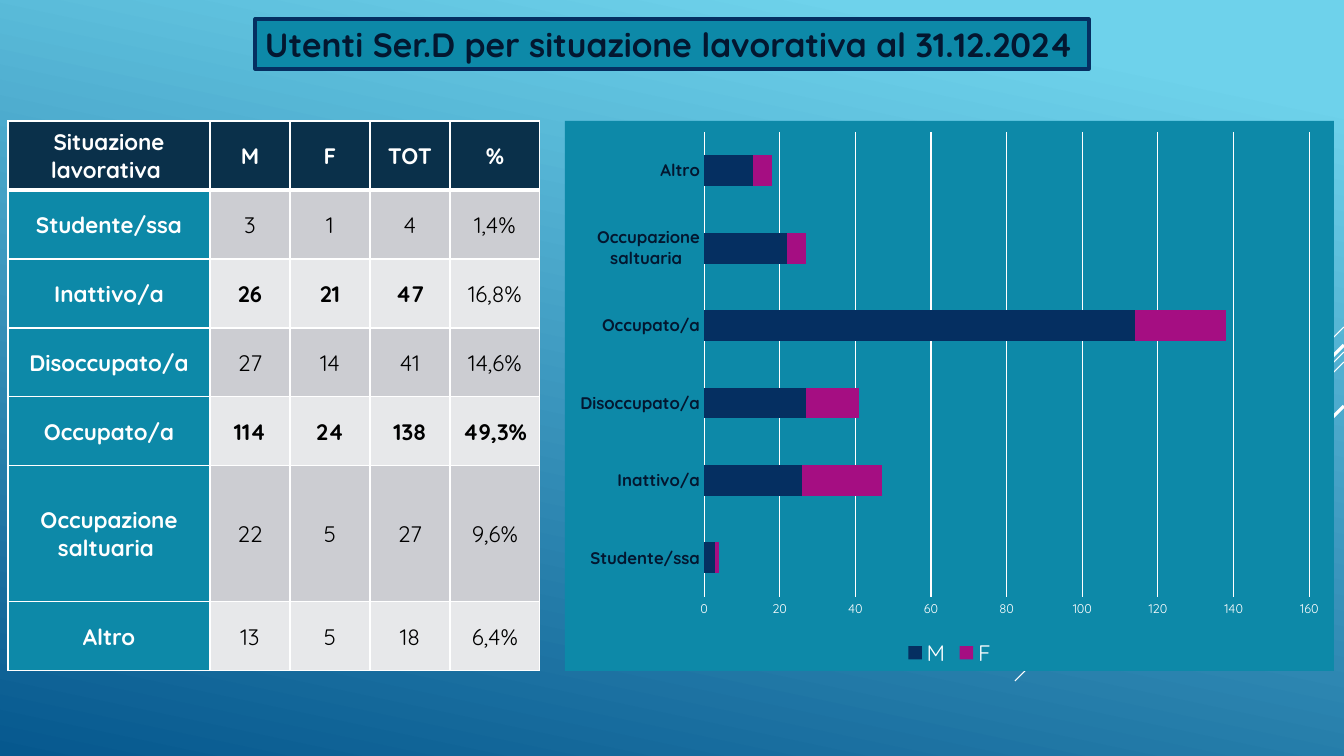
from dataclasses import dataclass

from lxml.etree import SubElement
from pptx import Presentation
from pptx.chart.data import CategoryChartData
from pptx.dml.color import RGBColor
from pptx.enum.chart import XL_CHART_TYPE, XL_LEGEND_POSITION, XL_TICK_MARK
from pptx.enum.shapes import MSO_CONNECTOR, MSO_SHAPE
from pptx.enum.text import MSO_ANCHOR, PP_ALIGN
from pptx.oxml import parse_xml
from pptx.oxml.ns import nsdecls, qn
from pptx.util import Pt

SLIDE_W, SLIDE_H = 1344, 756
SCALE = 12192000 / SLIDE_W


@dataclass(frozen=True)
class Theme:
    font: str = "Quicksand"
    sky: str = "6ED2EB"
    deep: str = "06588E"
    teal: str = "0D89A8"
    navy: str = "052F61"
    magenta: str = "A50E82"
    header: str = "0A304A"
    ink: str = "031730"
    white: str = "FFFFFF"
    black: str = "000000"
    bands: tuple = ("CCCDD2", "E7E8EA")
    title_size: int = 24
    body_size: int = 16
    category_size: int = 12
    chart_size: int = 10
    scale_size: int = 9


THEME = Theme()

HEADINGS = ["Situazione lavorativa ", "M", "F", "TOT", "%"]
SITUATIONS = [
    ("Studente/ssa", 3, 1, 4, "1,4%"),
    ("Inattivo/a", 26, 21, 47, "16,8%"),
    ("Disoccupato/a", 27, 14, 41, "14,6%"),
    ("Occupato/a", 114, 24, 138, "49,3%"),
    ("Occupazione saltuaria ", 22, 5, 27, "9,6%"),
    ("Altro", 13, 5, 18, "6,4%"),
]
# Last bold column in each emphasised row
BOLD_UNTIL = {"Inattivo/a": 3, "Occupato/a": 4}


def px(length):
    return round(length * SCALE)


def rgb(value):
    return RGBColor.from_string(value)


def style_font(font, size, color, bold=False):
    formats = {"name": THEME.font, "size": Pt(size), "bold": bold}
    for attribute, value in formats.items():
        setattr(font, attribute, value)
    font.color.rgb = rgb(color)


def style_line(line, color, width):
    line.color.rgb = rgb(color)
    line.width = Pt(width)


def add_background(slide):
    fill = slide.background.fill
    fill.gradient()
    fill.gradient_angle = 258
    for stop, (color, position) in zip(fill.gradient_stops, [(THEME.sky, 0.1), (THEME.deep, 1)]):
        stop.color.rgb = rgb(color)
        stop.position = position


def add_diagonals(slide, right):
    # Every ray leaves the right edge and falls at 45 degrees: top, run, width
    for top, run, width in [(327, 101, 0.75), (352, 329, 0.75), (362, 209, 0.75),
                            (345, 193, 2.25), (406, 140, 2.25)]:
        ray = slide.shapes.add_connector(
            MSO_CONNECTOR.STRAIGHT, px(right), px(top), px(right - run), px(top + run))
        style_line(ray.line, THEME.white, width)
        SubElement(ray._element.spPr, qn("a:effectLst"))


def add_title(slide, box):
    banner = slide.shapes.add_shape(MSO_SHAPE.RECTANGLE, *map(px, box))
    banner.shadow.inherit = False
    banner.fill.solid()
    banner.fill.fore_color.rgb = rgb(THEME.teal)
    style_line(banner.line, THEME.navy, 2.25)
    banner.text_frame.word_wrap = False
    heading = banner.text_frame.paragraphs[0]
    heading.alignment = PP_ALIGN.LEFT
    run = heading.add_run()
    run.text = "Utenti Ser.D per situazione lavorativa al 31.12.2024"
    style_font(run.font, THEME.title_size, THEME.ink, True)


def add_borders(cell, top, bottom):
    properties = cell._tc.get_or_add_tcPr()
    for side, width in {"L": 1, "R": 1, "T": top, "B": bottom}.items():
        border = SubElement(properties, qn(f"a:ln{side}"), w=str(Pt(width)))
        fill = SubElement(border, qn("a:solidFill"))
        SubElement(fill, qn("a:srgbClr"), val=THEME.white)


def fill_cell(cell, content, fill, color, bold):
    cell.fill.solid()
    cell.fill.fore_color.rgb = rgb(fill)
    formats = {"vertical_anchor": MSO_ANCHOR.MIDDLE, "margin_left": px(1),
               "margin_right": px(1), "margin_top": px(1), "margin_bottom": 0}
    for attribute, value in formats.items():
        setattr(cell, attribute, value)
    paragraph = cell.text_frame.paragraphs[0]
    paragraph.alignment = PP_ALIGN.CENTER
    run = paragraph.add_run()
    run.text = str(content)
    style_font(run.font, THEME.body_size, color, bold)


def add_situation_table(slide, box):
    rows = [HEADINGS, *SITUATIONS]
    table = slide.shapes.add_table(len(rows), len(HEADINGS), *map(px, box)).table
    for column, width in zip(table.columns, [202, 80, 80, 80, 90]):
        column.width = px(width)
    for row, height in zip(table.rows, [69, 69, 69, 69, 69, 136, 69]):
        row.height = px(height)
    for r, values in enumerate(rows):
        for c, content in enumerate(values):
            cell = table.cell(r, c)
            add_borders(cell, 3 if r == 1 else 1, 3 if r == 0 else 1)
            if r == 0:
                fill_cell(cell, content, THEME.header, THEME.white, True)
            elif c == 0:
                fill_cell(cell, content, THEME.teal, THEME.white, True)
            else:
                bold = c <= BOLD_UNTIL.get(values[0], 0)
                fill_cell(cell, content, THEME.bands[(r - 1) % 2], THEME.black, bold)


def add_situation_chart(slide, box):
    data = CategoryChartData()
    data.categories = [row[0] for row in SITUATIONS]
    for column in (1, 2):
        data.add_series(HEADINGS[column], [row[column] for row in SITUATIONS])
    chart = slide.shapes.add_chart(XL_CHART_TYPE.BAR_STACKED, *map(px, box), data).chart
    chart.has_title = False
    style_font(chart.font, THEME.chart_size, THEME.white)

    # Panel behind the bars
    panel = parse_xml(
        f'<c:spPr {nsdecls("c", "a")}><a:solidFill><a:srgbClr val="{THEME.teal}"/></a:solidFill>'
        '<a:ln><a:noFill/></a:ln></c:spPr>')
    chart._chartSpace.find(qn("c:chart")).addnext(panel)

    # Bars
    plot = chart.plots[0]
    for attribute, value in {"gap_width": 150, "overlap": 100, "vary_by_categories": False}.items():
        setattr(plot, attribute, value)
    for series, color in zip(plot.series, (THEME.navy, THEME.magenta)):
        series.format.fill.solid()
        series.format.fill.fore_color.rgb = rgb(color)

    # Axes
    situations, users = chart.category_axis, chart.value_axis
    for axis in (situations, users):
        axis.major_tick_mark = axis.minor_tick_mark = XL_TICK_MARK.NONE
    style_font(situations.tick_labels.font, THEME.category_size, THEME.ink, True)
    style_line(situations.format.line, THEME.white, 0.75)
    style_font(users.tick_labels.font, THEME.scale_size, THEME.white)
    users.format.line.fill.background()
    formats = {"minimum_scale": 0, "maximum_scale": 160, "major_unit": 20,
               "has_major_gridlines": True}
    for attribute, value in formats.items():
        setattr(users, attribute, value)
    style_line(users.major_gridlines.format.line, THEME.white, 0.75)

    # Legend
    chart.has_legend = True
    chart.legend.position = XL_LEGEND_POSITION.BOTTOM
    chart.legend.include_in_layout = False
    style_font(chart.legend.font, THEME.body_size, THEME.white)


def main():
    deck = Presentation()
    deck.slide_width, deck.slide_height = px(SLIDE_W), px(SLIDE_H)
    slide = deck.slides.add_slide(deck.slide_layouts[6])
    add_background(slide)
    add_diagonals(slide, SLIDE_W)
    add_title(slide, (255, 19, 834, 50))
    add_situation_table(slide, (8, 121, 532, 550))
    add_situation_chart(slide, (565, 121, 769, 550))
    deck.save("out.pptx")


if __name__ == "__main__":
    main()
